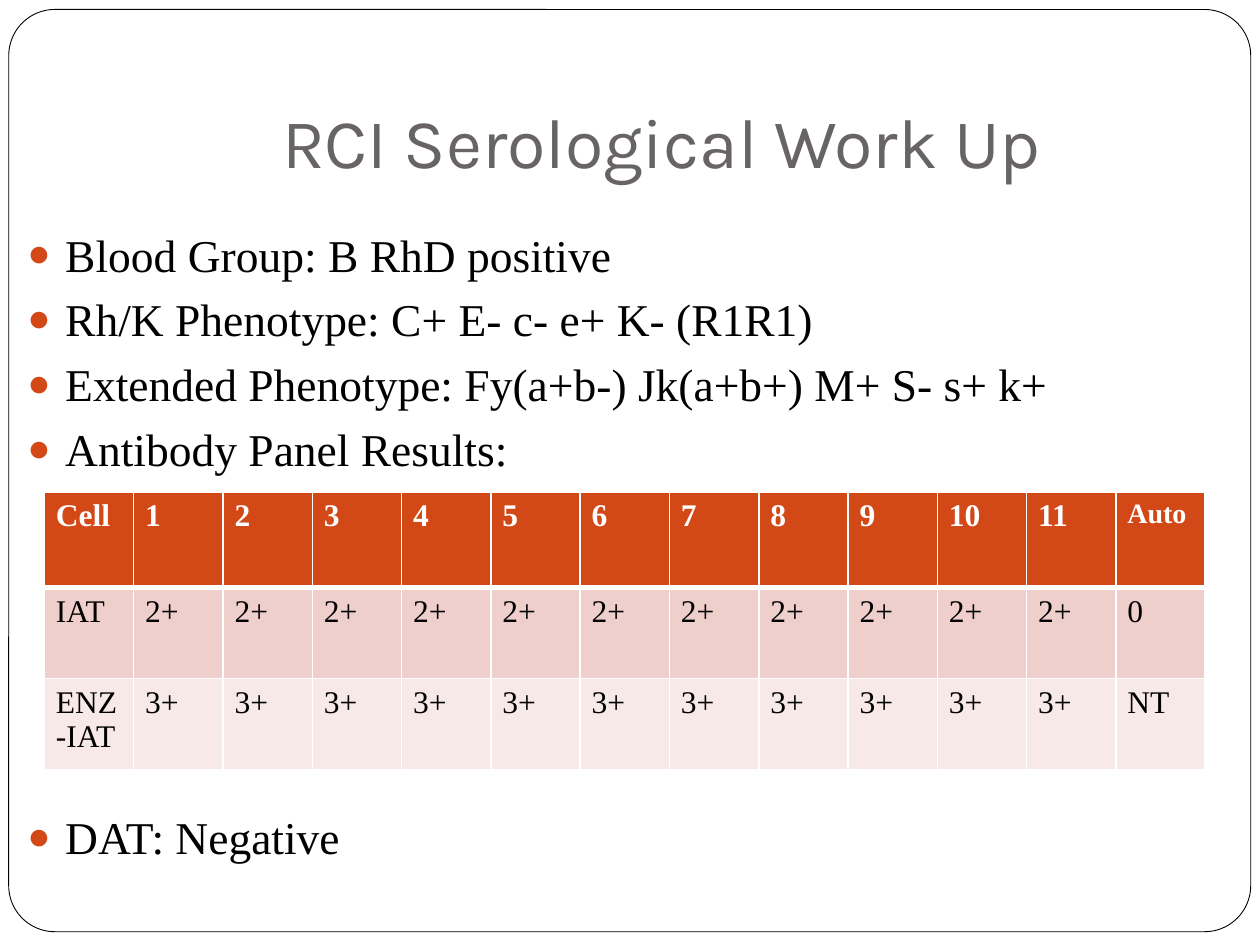
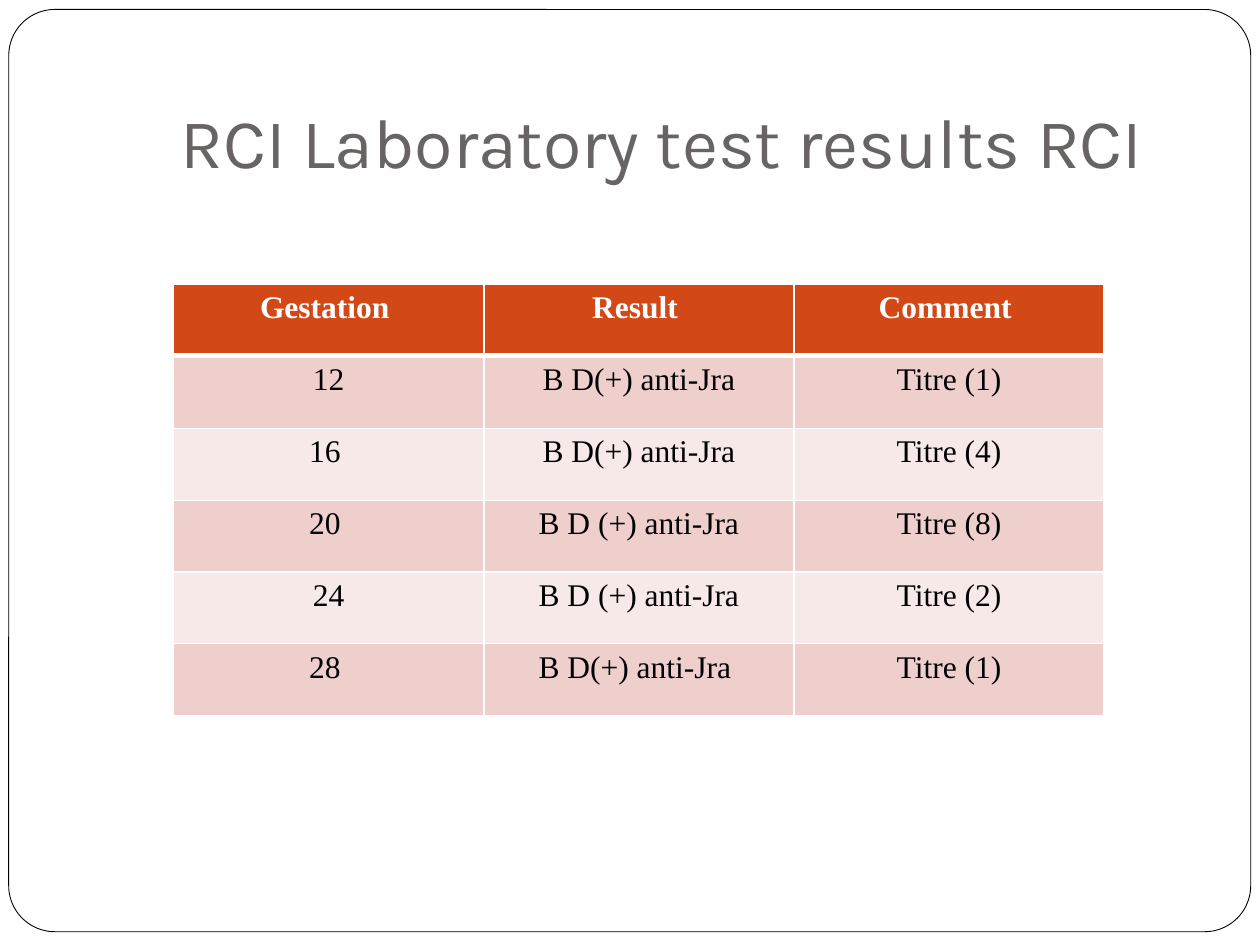
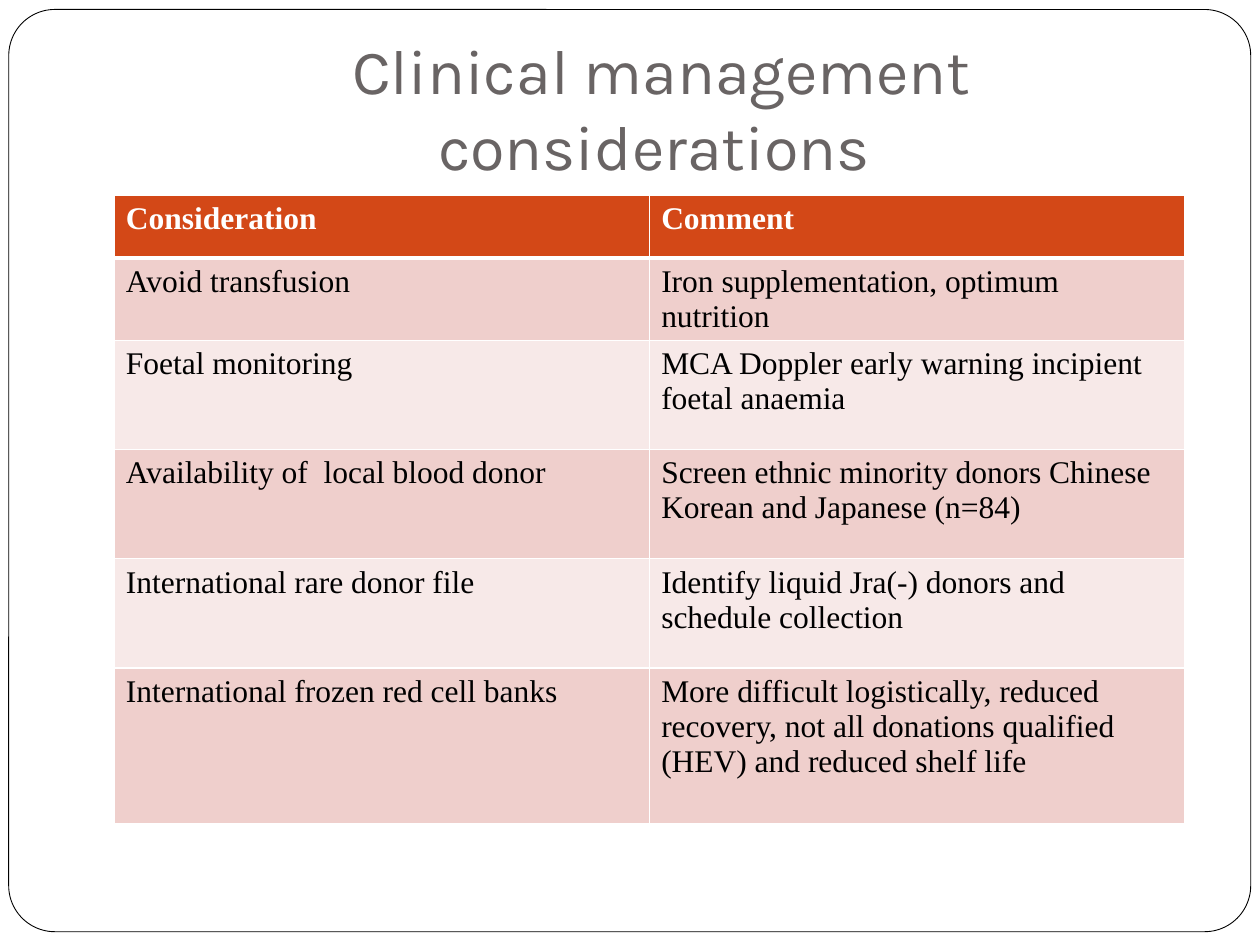
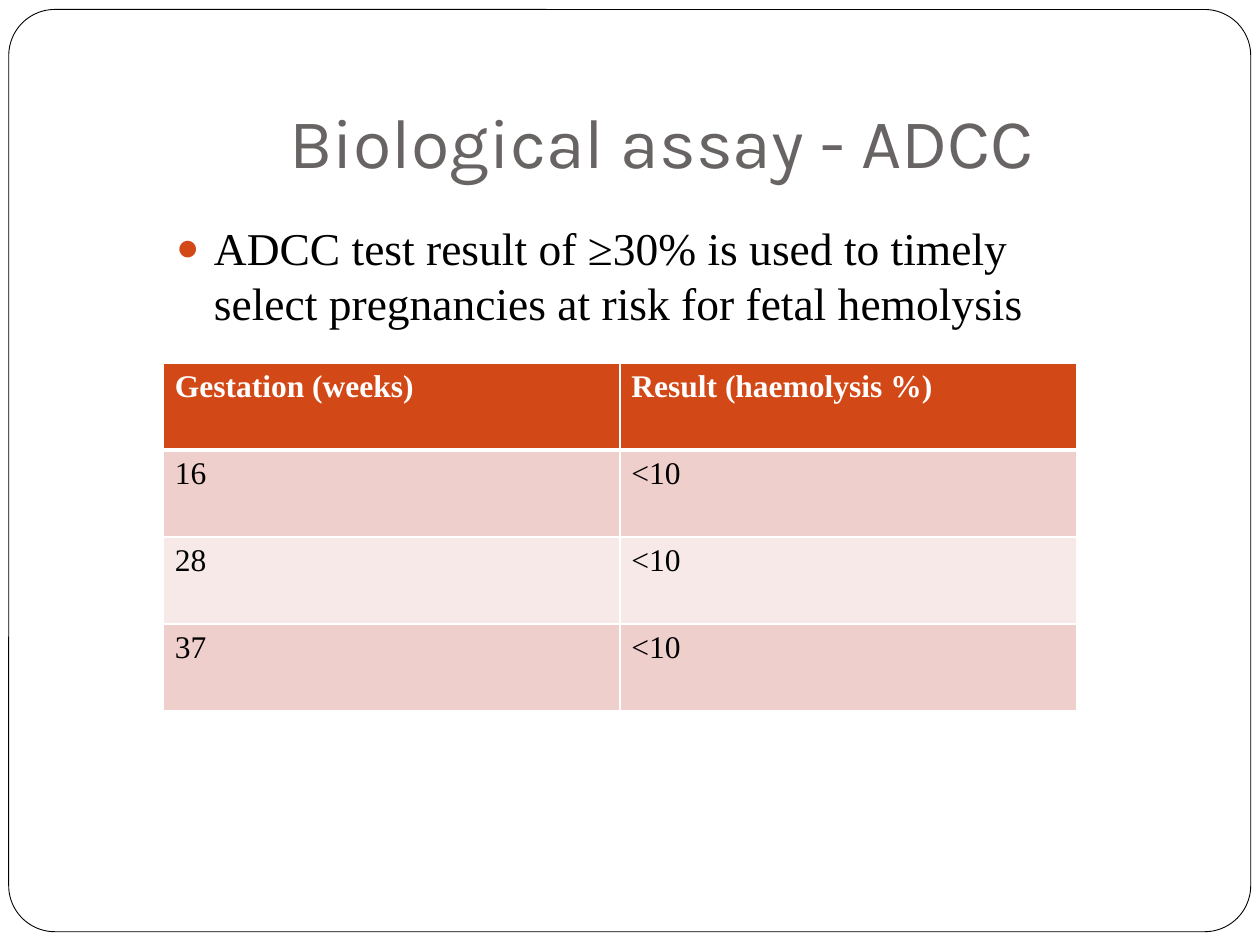
from lxml import etree
from pptx import Presentation
from pptx.dml.color import RGBColor
from pptx.enum.shapes import MSO_SHAPE
from pptx.enum.text import MSO_ANCHOR, MSO_AUTO_SIZE, PP_ALIGN
from pptx.oxml.ns import qn
from pptx.util import Pt

ROUNDED = MSO_SHAPE.ROUNDED_RECTANGLE
BOTTOM = MSO_ANCHOR.BOTTOM
NO_AUTOFIT = MSO_AUTO_SIZE.NONE
LEFT, CENTER = PP_ALIGN.LEFT, PP_ALIGN.CENTER

COLORS = {"accent": "D34817", "title": "696464", "text": "000000", "paper": "FFFFFF",
          "band_dark": "EFCFCC", "band_light": "F7E9E8"}
TITLE_FONT, BODY_FONT = "Karla", "Times New Roman"
TITLE_ONLY = 5

FRAME_BOX = (5, 5.4, 709.7, 527)
TITLE_BOX = (72, 21.6, 612, 90)
TITLE_MARGINS = {"margin_left": Pt(7.2), "margin_top": Pt(3.6),
                 "margin_right": Pt(7.2), "margin_bottom": Pt(7.2)}
CELL_MARGINS = {"margin_left": Pt(6.6), "margin_top": Pt(3.6),
                "margin_right": Pt(6.6), "margin_bottom": Pt(3.6)}
BULLET_GAP = 5.8
BULLET_INDENT = 21.6

PANEL = [
    ["Cell", *map(str, range(1, 12)), "Auto"],
    ["IAT"] + ["2+"] * 11 + ["0"],
    ["ENZ-IAT"] + ["3+"] * 11 + ["NT"],
]
TITRES = [
    ["Gestation ", "Result ", "Comment "],
    ["12", "B D(+) anti-Jra", "Titre (1)"],
    ["16 ", "B D(+) anti-Jra", "Titre (4)"],
    ["20 ", "B D (+) anti-Jra", "Titre (8)"],
    ["24", "B D (+) anti-Jra", "Titre (2)"],
    ["28 ", "B D(+) anti-Jra ", "Titre (1)"],
]
CONSIDERATIONS = [
    ["Consideration", "Comment"],
    ["Avoid transfusion", "Iron supplementation, optimum nutrition"],
    ["Foetal monitoring", "MCA Doppler early warning incipient foetal anaemia"],
    ["Availability of  local blood donor",
     "Screen ethnic minority donors Chinese Korean and Japanese (n=84)"],
    ["International rare donor file",
     "Identify liquid Jra(-) donors and schedule collection"],
    ["International frozen red cell banks",
     "More difficult logistically, reduced recovery, not all donations qualified "
     "(HEV) and reduced shelf life"],
]
ADCC = [["Gestation (weeks)", "Result (haemolysis %)"],
        ["16", "<10"], ["28", "<10"], ["37", "<10"]]


def rgb(name):
    return RGBColor.from_string(COLORS[name])


def set_attrs(target, values):
    for name, value in values.items():
        setattr(target, name, value)


def points(box):
    return [Pt(v) for v in box]


def add_run(p, text, font, size, color, bold=False):
    r = p.add_run()
    r.text = text
    set_attrs(r.font, {"name": font, "size": Pt(size), "bold": bold})
    r.font.color.rgb = rgb(color)


def add_frame(s):
    """Draw the page frame behind everything else on the slide."""
    frame = s.shapes.add_shape(ROUNDED, *points(FRAME_BOX))
    frame.adjustments[0] = 0.05
    frame.shadow.inherit = False
    frame.fill.solid()
    frame.fill.fore_color.rgb = rgb("paper")
    frame.line.color.rgb = rgb("text")
    frame.line.width = Pt(0.5)
    s.shapes.element.insert(2, frame.element)


def add_titled_slide(prs, title, size=40):
    s = prs.slides.add_slide(prs.slide_layouts[TITLE_ONLY])
    add_frame(s)
    sp = s.shapes.title
    set_attrs(sp, dict(zip(("left", "top", "width", "height"), points(TITLE_BOX))))
    tf = sp.text_frame
    set_attrs(tf, TITLE_MARGINS)
    set_attrs(tf, {"word_wrap": True, "auto_size": NO_AUTOFIT, "vertical_anchor": BOTTOM})
    p = tf.paragraphs[0]
    p.alignment = CENTER
    add_run(p, title, TITLE_FONT, size, "title")
    return s


def set_bullet(p):
    pPr = p._p.get_or_add_pPr()
    pPr.set("marL", str(Pt(BULLET_INDENT)))
    pPr.set("indent", str(-Pt(BULLET_INDENT)))
    color = etree.SubElement(pPr, qn("a:buClr"))
    etree.SubElement(color, qn("a:srgbClr"), val=COLORS["accent"])
    etree.SubElement(pPr, qn("a:buSzPct"), val="85000")
    etree.SubElement(pPr, qn("a:buFont"), typeface=BODY_FONT)
    etree.SubElement(pPr, qn("a:buChar"), char="●")


def add_bullets(s, box, items):
    """Place bulleted (text, space before) items in the box."""
    tf = s.shapes.add_textbox(*points(box)).text_frame
    tf.word_wrap = True
    for i, (text, gap) in enumerate(items):
        p = tf.add_paragraph() if i else tf.paragraphs[0]
        set_attrs(p, {"alignment": LEFT, "space_before": Pt(gap)})
        set_bullet(p)
        add_run(p, text, BODY_FONT, 26, "text")


def set_borders(cell, row):
    """Rule the cell in white, with a thicker line under the header row."""
    widths = {"L": 1, "R": 1, "T": 3 if row == 1 else 1, "B": 3 if row == 0 else 1}
    tcPr = cell._tc.get_or_add_tcPr()
    for side, width in widths.items():
        ln = etree.SubElement(tcPr, qn(f"a:ln{side}"), w=str(Pt(width)))
        fill = etree.SubElement(ln, qn("a:solidFill"))
        etree.SubElement(fill, qn("a:srgbClr"), val=COLORS["paper"])


def add_banded_table(s, left, top, width, row_heights, rows, align=LEFT, sizes=None):
    """Fill a table with equal columns; sizes maps a text to its own font size."""
    n_cols = len(rows[0])
    box = (left, top, width, sum(row_heights))
    table = s.shapes.add_table(len(rows), n_cols, *points(box)).table
    table.horz_banding = False
    for column in table.columns:
        column.width = Pt(width / n_cols)
    for i, (texts, height) in enumerate(zip(rows, row_heights)):
        table.rows[i].height = Pt(height)
        header = i == 0
        band = "accent" if header else "band_dark" if i % 2 else "band_light"
        for j, text in enumerate(texts):
            cell = table.cell(i, j)
            set_borders(cell, i)
            set_attrs(cell, CELL_MARGINS)
            cell.fill.solid()
            cell.fill.fore_color.rgb = rgb(band)
            p = cell.text_frame.paragraphs[0]
            p.alignment = align
            add_run(p, text, BODY_FONT, (sizes or {}).get(text, 18),
                    "paper" if header else "text", header)


def build_work_up(prs):
    s = add_titled_slide(prs, "RCI Serological Work Up")
    findings = ["Blood Group: B RhD positive",
                "Rh/K Phenotype: C+ E- c- e+ K- (R1R1)",
                "Extended Phenotype: Fy(a+b-) Jk(a+b+) M+ S- s+ k+",
                "Antibody Panel Results:"]
    items = [(text, BULLET_GAP) for text in findings]
    items.append(("DAT: Negative", 190.5))
    add_bullets(s, (8.6, 126, 711, 404.6), items)
    add_banded_table(s, 25.4, 281.4, 663.6, [54.4, 52, 52], PANEL, sizes={"Auto": 16})


def build_test_results(prs):
    s = add_titled_slide(prs, "RCI Laboratory test results RCI")
    heights = [41, 41.7] + [41] * 4
    add_banded_table(s, 99.2, 162.2, 531.8, heights, TITRES, align=CENTER)


def build_considerations(prs):
    s = add_titled_slide(prs, "Clinical management considerations ", size=36)
    heights = [36, 46.8] + [62.4] * 3 + [89]
    add_banded_table(s, 65.4, 111.4, 611.8, heights, CONSIDERATIONS)


def build_assay(prs):
    s = add_titled_slide(prs, "Biological assay - ADCC")
    add_banded_table(s, 93.4, 207.5, 521.8, [49.7] * 4, ADCC)
    add_bullets(s, (93.6, 122.4, 516.2, 70.6),
                [("ADCC test result of ≥30% is used to timely select pregnancies "
                  "at risk for fetal hemolysis", BULLET_GAP)])


def main():
    prs = Presentation()
    prs.slide_width, prs.slide_height = Pt(720), Pt(540)
    build_work_up(prs)
    build_test_results(prs)
    build_considerations(prs)
    build_assay(prs)
    prs.save("out.pptx")


if __name__ == "__main__":
    main()
